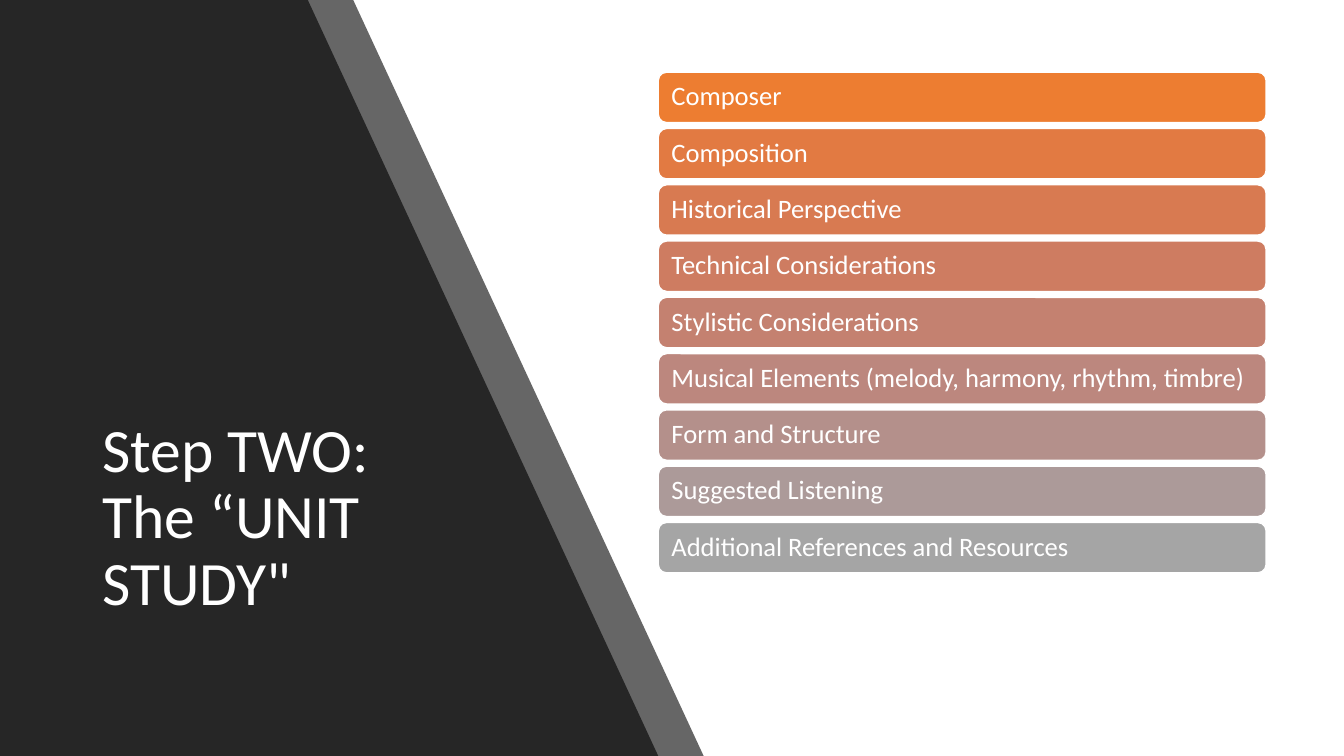
import pptx
import pptx.util
import pptx.dml.color
import pptx.enum.shapes
import pptx.enum.text
import pptx.oxml.ns
from lxml import etree

Pt = pptx.util.Pt
ALIGN = pptx.enum.text.PP_ALIGN.LEFT
MIDDLE = pptx.enum.text.MSO_ANCHOR.MIDDLE

COLORS = {"panel": "262626", "white": "FFFFFF"}
TITLE = "Step TWO: The “UNIT STUDY\""
TOPICS = [
    ("Composer", "ED7D31"),
    ("Composition", "E27A42"),
    ("Historical Perspective", "D87A51"),
    ("Technical Considerations", "CE7C61"),
    ("Stylistic Considerations", "C48170"),
    ("Musical Elements (melody, harmony, rhythm, timbre)", "BC877E"),
    ("Form and Structure", "B4908B"),
    ("Suggested Listening", "AC9A99"),
    ("Additional References and Resources", "A5A5A5"),
]
PANELS = [
    {"top": 252.3, "bottom": 502.6, "opacity": 70},
    {"top": 219.9, "bottom": 470.2, "opacity": 100},
]
SLIDE_W, SLIDE_H = 960, 540
TITLE_BOX = (66.2, 251.3, 257.8, 238.3)
BAR = {"left": 470.2, "top": 51.6, "width": 434.2, "height": 36, "pitch": 40.2}
TITLE_FRAME = {"word_wrap": True, "vertical_anchor": MIDDLE}
BAR_FRAME = {**TITLE_FRAME, "margin_left": Pt(7.7), "margin_right": Pt(7.7),
             "margin_top": Pt(7.5), "margin_bottom": Pt(7.5)}


def rgb(value):
    return pptx.dml.color.RGBColor.from_string(value)


def paint(sp, color):
    sp.shadow.inherit = False
    sp.fill.solid()
    sp.fill.fore_color.rgb = rgb(color)


def write(sp, text, size, frame):
    tf = sp.text_frame
    for name, value in frame.items():
        setattr(tf, name, value)
    p = tf.paragraphs[0]
    p.alignment = ALIGN
    p.line_spacing = 0.9
    r = p.add_run()
    r.text = text
    for name, value in {"name": "Calibri", "size": Pt(size)}.items():
        setattr(r.font, name, value)
    r.font.color.rgb = rgb(COLORS["white"])


def add_panel(s, top, bottom, opacity):
    outline = s.shapes.build_freeform(0, Pt(SLIDE_H))
    corners = [(bottom, SLIDE_H), (top, 0), (0, 0)]
    outline.add_line_segments([(Pt(x), Pt(y)) for x, y in corners], close=True)
    sp = outline.convert_to_shape()
    paint(sp, COLORS["panel"])
    sp.line.fill.background()
    if opacity < 100:
        clr = sp.fill._xPr.find(".//" + pptx.oxml.ns.qn("a:srgbClr"))
        etree.SubElement(clr, pptx.oxml.ns.qn("a:alpha"), val=str(opacity * 1000))


def add_bar(s, index, text, color):
    top = BAR["top"] + index * BAR["pitch"]
    sp = s.shapes.add_shape(
        pptx.enum.shapes.MSO_SHAPE.ROUNDED_RECTANGLE,
        Pt(BAR["left"]), Pt(top), Pt(BAR["width"]), Pt(BAR["height"]))
    paint(sp, color)
    sp.line.color.rgb = rgb(COLORS["white"])
    sp.line.width = Pt(1)
    write(sp, text, 19, BAR_FRAME)


def main():
    prs = pptx.Presentation()
    prs.slide_width, prs.slide_height = Pt(SLIDE_W), Pt(SLIDE_H)
    s = prs.slides.add_slide(prs.slide_layouts[6])
    for panel in PANELS:
        add_panel(s, **panel)
    title = s.shapes.add_textbox(*map(Pt, TITLE_BOX))
    write(title, TITLE, 44, TITLE_FRAME)
    for index, (text, color) in enumerate(TOPICS):
        add_bar(s, index, text, color)
    prs.save("out.pptx")


if __name__ == "__main__":
    main()
